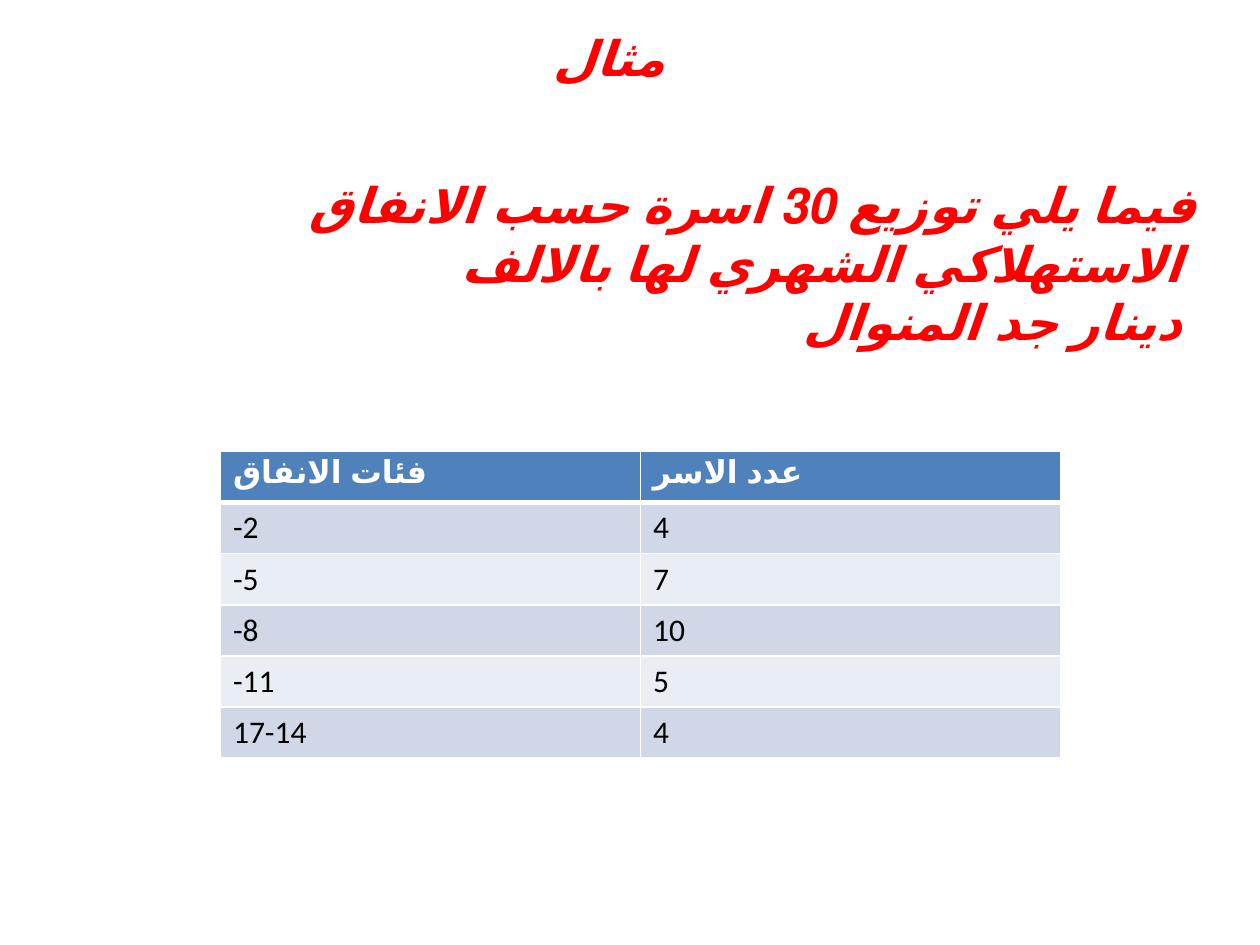
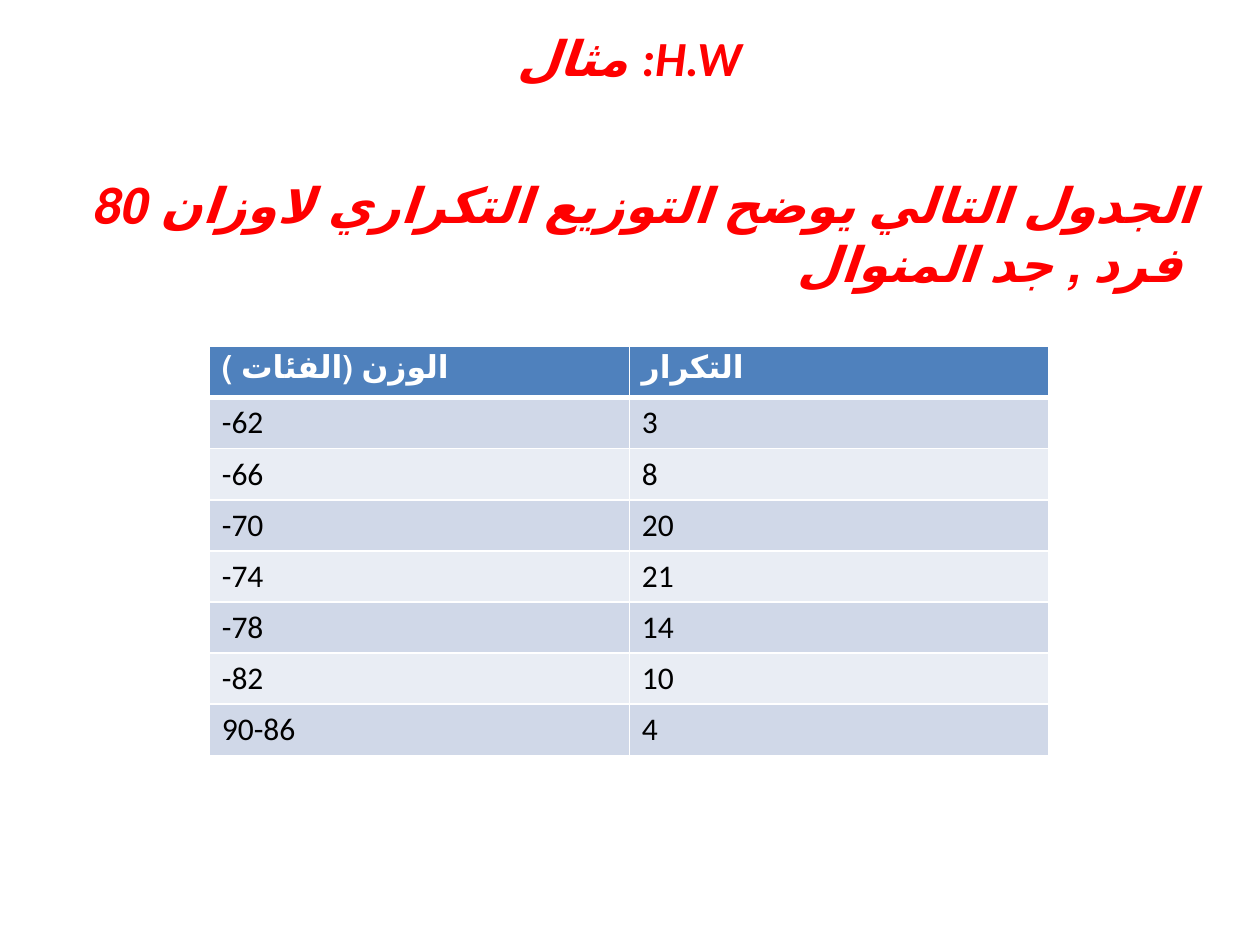
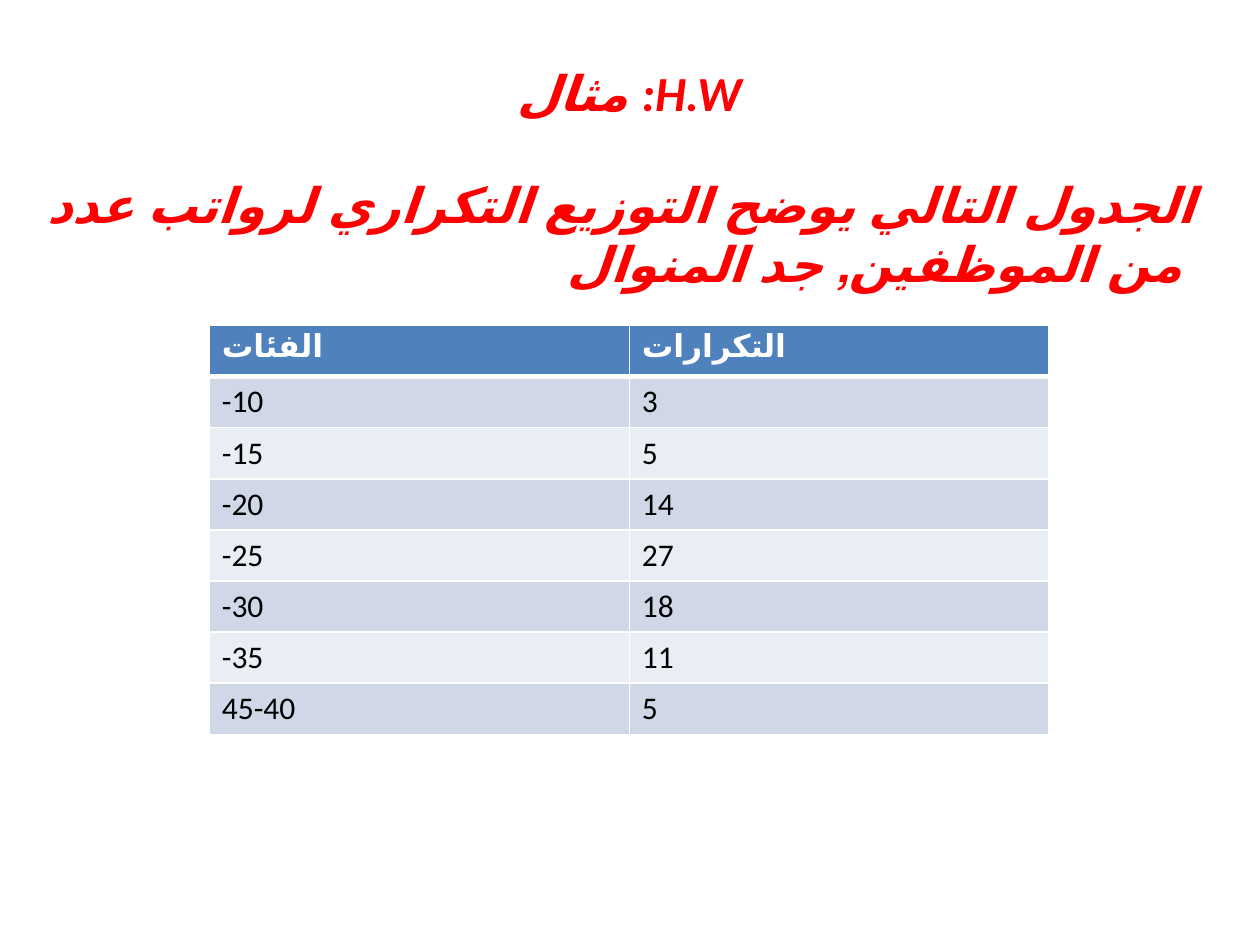
from dataclasses import dataclass

from lxml.etree import SubElement
from pptx import Presentation
from pptx.dml.color import RGBColor
from pptx.enum.lang import MSO_LANGUAGE_ID
from pptx.enum.text import PP_ALIGN
from pptx.oxml.ns import qn
from pptx.slide import Slide
from pptx.table import _Cell as Cell
from pptx.util import Pt


@dataclass(frozen=True)
class Theme:
    font: str = "Calibri"
    red: str = "FF0000"
    white: str = "FFFFFF"
    black: str = "000000"
    head: str = "4F81BD"
    bands: tuple[str, str] = ("D0D8E8", "E9EDF4")
    big: float = 28
    small: float = 18
    thin: float = 1
    thick: float = 3


@dataclass(frozen=True)
class Box:
    left: float
    top: float
    width: float
    height: float
    inset: float = 7.2  # right inner margin


@dataclass(frozen=True)
class Line:
    text: str
    rtl: bool = False


@dataclass(frozen=True)
class Task:
    title: str
    title_box: Box
    lines: list[Line]
    body_box: Box
    table_left: float
    table_top: float
    rows: list[tuple[str, str]]


THEME = Theme()
COL_WIDTH = 240
ROW_HEIGHT = 29.2

TASKS = [
    Task(
        "مثال", Box(98.6, 12.2, 522, 41.2, 30),
        [Line("فيما يلي توزيع 30 اسرة حسب الانفاق الاستهلاكي الشهري لها بالالف "),
         Line(" دينار جد المنوال", rtl=True)],
        Box(18, 96, 672, 109), 126, 258,
        [("فئات الانفاق", "عدد الاسر"), ("-2", "4"), ("-5", "7"),
         ("-8", "10"), ("-11", "5"), ("17-14", "4")],
    ),
    Task(
        "مثال :H.W", Box(98.6, 12.2, 522, 41.2),
        [Line("الجدول التالي يوضح التوزيع التكراري لاوزان 80 فرد , جد المنوال ")],
        Box(42, 96, 648, 75), 119.6, 198,
        [("الوزن (الفئات )", "التكرار"), ("-62", "3"), ("-66", "8"),
         ("-70", "20"), ("-74", "21"), ("-78", "14"), ("-82", "10"),
         ("90-86", "4")],
    ),
    Task(
        "مثال :H.W", Box(98.6, 32.4, 522, 41.2),
        [Line("الجدول التالي يوضح التوزيع التكراري لرواتب عدد من الموظفين, جد المنوال ")],
        Box(18, 96, 672, 75), 119.6, 186,
        [("الفئات", "التكرارات"), ("-10", "3"), ("-15", "5"), ("-20", "14"),
         ("-25", "27"), ("-30", "18"), ("-35", "11"), ("45-40", "5")],
    ),
]


def style(para, size: float, color: str, bold: bool, italic: bool = False) -> None:
    font = para.font
    font.name, font.size = THEME.font, Pt(size)
    font.bold, font.italic = bold, italic
    font.color.rgb = RGBColor.from_string(color)
    for run in para.runs:
        run.font.language_id = MSO_LANGUAGE_ID.ARABIC_IRAQ


def add_text(slide: Slide, box: Box, lines: list[Line], align: PP_ALIGN) -> None:
    shape = slide.shapes.add_textbox(
        Pt(box.left), Pt(box.top), Pt(box.width), Pt(box.height))
    frame = shape.text_frame
    frame.word_wrap = True
    frame.margin_right = Pt(box.inset)
    for i, line in enumerate(lines):
        para = frame.add_paragraph() if i else frame.paragraphs[0]
        para.text = line.text
        para.alignment = align
        if line.rtl:
            para._p.get_or_add_pPr().set("rtl", "1")
        style(para, THEME.big, THEME.red, bold=True, italic=True)


def add_edges(cell: Cell, row: int) -> None:
    """Draw white borders, thick between the header and the first row."""
    props = cell._tc.get_or_add_tcPr()
    thick = {"T": row == 1, "B": row == 0}
    for side in "LRTB":
        width = THEME.thick if thick.get(side) else THEME.thin
        edge = SubElement(props, qn(f"a:ln{side}"), w=str(Pt(width)))
        fill = SubElement(edge, qn("a:solidFill"))
        SubElement(fill, qn("a:srgbClr"), val=THEME.white)


def add_grid(slide: Slide, task: Task) -> None:
    count = len(task.rows)
    table = slide.shapes.add_table(
        count, 2, Pt(task.table_left), Pt(task.table_top),
        Pt(2 * COL_WIDTH), Pt(count * ROW_HEIGHT)).table
    for r, values in enumerate(task.rows):
        table.rows[r].height = Pt(ROW_HEIGHT)
        back = THEME.bands[(r - 1) % 2] if r else THEME.head
        ink = THEME.black if r else THEME.white
        for c, value in enumerate(values):
            cell = table.cell(r, c)
            cell.text = value
            style(cell.text_frame.paragraphs[0], THEME.small, ink, bold=r == 0)
            add_edges(cell, r)
            cell.fill.solid()
            cell.fill.fore_color.rgb = RGBColor.from_string(back)


def main() -> None:
    deck = Presentation()
    deck.slide_width, deck.slide_height = Pt(720), Pt(540)
    for task in TASKS:
        slide = deck.slides.add_slide(deck.slide_layouts[6])
        add_text(slide, task.title_box, [Line(task.title)], PP_ALIGN.CENTER)
        add_text(slide, task.body_box, task.lines, PP_ALIGN.RIGHT)
        add_grid(slide, task)
    deck.save("out.pptx")


if __name__ == "__main__":
    main()
